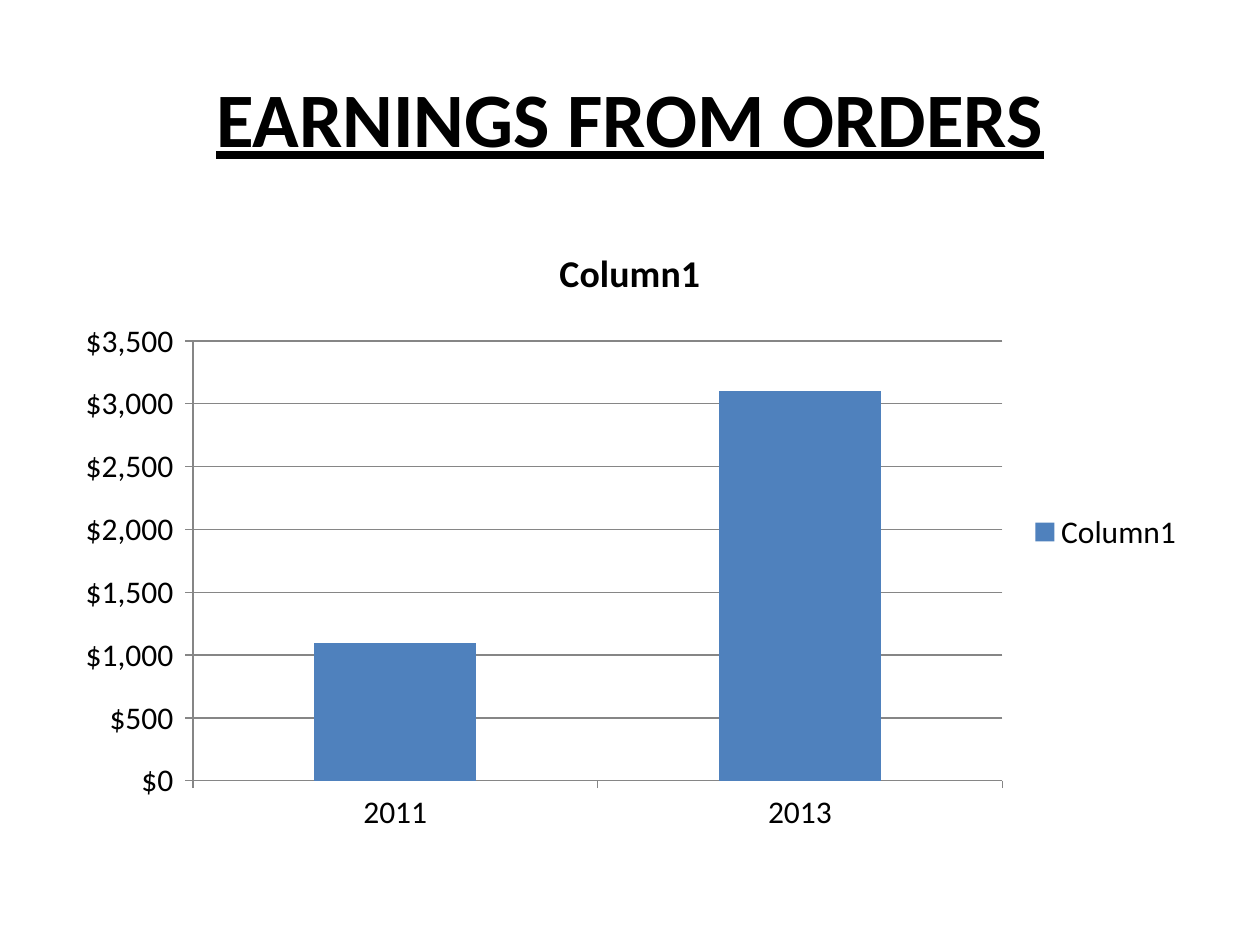
from pptx import Presentation
from pptx import util as u
from pptx.chart import data
from pptx.dml import color
from pptx.enum import chart as c, text

BLACK = color.RGBColor(0x00, 0x00, 0x00)
BLUE = color.RGBColor(0x4F, 0x81, 0xBD)
GREY = color.RGBColor(0x86, 0x86, 0x86)
FONT = "Calibri"
DOLLARS = r'"$"#,##0_);[Red]\("$"#,##0\)'
HEADING = {"name": FONT, "size": u.Pt(44), "bold": True, "underline": True}
LABELS = {"name": FONT, "size": u.Pt(18), "bold": False}
CHART_TITLE = {"name": FONT, "size": u.Pt(21.6), "bold": True}


def set_font(font, formats):
    """Apply the format values to a font and colour it black."""
    for name, value in formats.items():
        setattr(font, name, value)
    font.color.rgb = BLACK


def set_grey_line(line):
    """Give a chart line the thin grey stroke."""
    line.color.rgb = GREY
    line.width = u.Pt(0.75)


def place_title(slide, left, top, width, height):
    """Place and format the slide heading in the given box."""
    title = slide.shapes.title
    box = {"left": left, "top": top, "width": width, "height": height}
    for name, value in box.items():
        setattr(title, name, value)
    title.text_frame.text = "EARNINGS FROM ORDERS"
    title.text_frame.vertical_anchor = text.MSO_ANCHOR.MIDDLE
    paragraph = title.text_frame.paragraphs[0]
    paragraph.alignment = text.PP_ALIGN.CENTER
    set_font(paragraph.runs[0].font, HEADING)


def place_earnings_chart(slide, left, top, width, height):
    """Place the column chart of yearly earnings in the given box."""
    earnings = data.CategoryChartData(number_format=DOLLARS)
    earnings.categories = ["2011", "2013"]
    earnings.add_series("Column1", [1100, 3100])
    chart = slide.shapes.add_chart(
        c.XL_CHART_TYPE.COLUMN_CLUSTERED, left, top, width, height, earnings
    ).chart
    set_font(chart.font, LABELS)

    chart.has_title = True
    chart.chart_title.text_frame.text = "Column1"
    chart.chart_title.include_in_layout = False
    set_font(chart.chart_title.text_frame.paragraphs[0].runs[0].font, CHART_TITLE)

    chart.has_legend = True
    chart.legend.position = c.XL_LEGEND_POSITION.RIGHT
    chart.legend.include_in_layout = False

    plot = chart.plots[0]
    plot.gap_width = 150
    plot.vary_by_categories = False
    fill = plot.series[0].format.fill
    fill.solid()
    fill.fore_color.rgb = BLUE

    for axis in (chart.category_axis, chart.value_axis):
        axis.major_tick_mark = c.XL_TICK_MARK.OUTSIDE
        set_grey_line(axis.format.line)
    value_axis = chart.value_axis
    value_axis.has_major_gridlines = True
    set_grey_line(value_axis.major_gridlines.format.line)
    value_axis.minimum_scale = 0
    value_axis.maximum_scale = 3500
    value_axis.major_unit = 500
    value_axis.tick_labels.number_format = DOLLARS
    value_axis.tick_labels.number_format_is_linked = False


def main():
    """Build the earnings slide and save it."""
    presentation = Presentation()
    presentation.slide_width = u.Cm(25.4)
    presentation.slide_height = u.Cm(19.05)
    slide = presentation.slides.add_slide(presentation.slide_layouts[5])
    margin = u.Cm(1.27)
    width = presentation.slide_width - 2 * margin
    place_title(slide, margin, u.Cm(0.76), width, u.Cm(3.18))
    place_earnings_chart(slide, margin, u.Cm(4.44), width, u.Cm(12.57))
    presentation.save("out.pptx")


if __name__ == "__main__":
    main()
